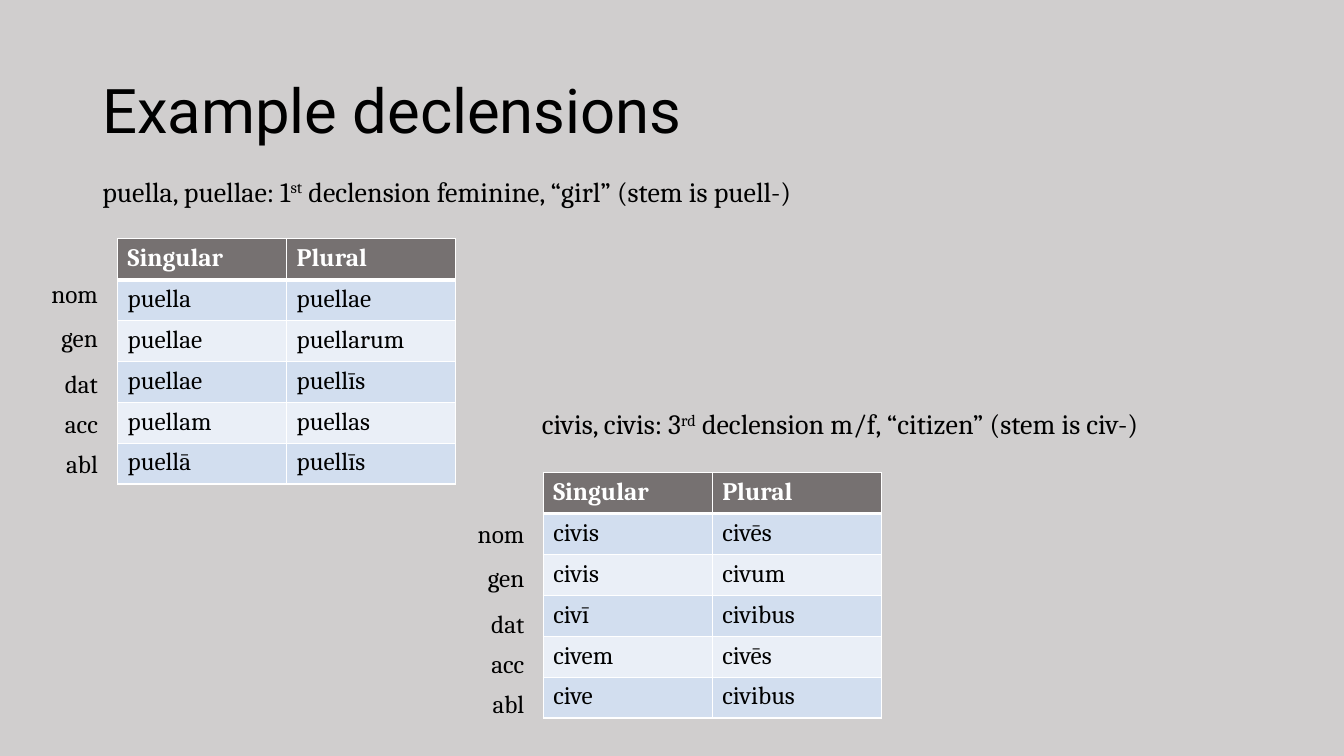
from lxml.etree import SubElement
from pptx import Presentation
from pptx.dml.color import RGBColor
from pptx.enum.shapes import MSO_SHAPE
from pptx.enum.text import MSO_ANCHOR, PP_ALIGN
from pptx.oxml.ns import qn
from pptx.util import Pt

BLACK = RGBColor(0, 0, 0)
WHITE = RGBColor(255, 255, 255)
GREY = RGBColor(0xD0, 0xCE, 0xCE)
HEAD = RGBColor(0x76, 0x71, 0x71)
BANDS = [RGBColor(0xEA, 0xEF, 0xF7), RGBColor(0xD2, 0xDE, 0xEF)]

CASES = ["nom", "gen", "dat", "acc", "abl"]
DROPS = [0, 31.7, 64.1, 92.9, 121.7]
ROW, COL = 29.2, 120.75

# Heading runs and place, table place, label place, forms
NOUNS = [
    (["puella, puellae: 1", "st", " declension feminine, “girl” (stem is puell-)"],
     (66, 121, 840), (84, 170.6), (28, 195.1),
     [("puella", "puellae"), ("puellae", "puellarum"), ("puellae", "puellīs"),
      ("puellam", "puellas"), ("puellā", "puellīs")]),
    (["civis, civis: 3", "rd", " declension m/f, “citizen” (stem is civ-)"],
     (380, 286.8, 500), (388, 337.7), (332.6, 366.5),
     [("civis", "civēs"), ("civis", "civum"), ("civī", "civibus"),
      ("civem", "civēs"), ("cive", "civibus")]),
]


def add_text(shapes, runs, box, size, face="Cambria"):
    """Add a one-paragraph text box; every second run is superscript."""
    frame = shapes.add_textbox(*map(Pt, box)).text_frame
    frame.word_wrap = True
    para = frame.paragraphs[0]
    para.font.size, para.font.name = Pt(size), face
    para.font.color.rgb = BLACK
    for i, text in enumerate(runs):
        run = para.add_run()
        run.text = text
        if i % 2:
            run.font._element.set("baseline", "30000")
    return frame


def add_edge(cell, side, width):
    line = SubElement(cell._tc.get_or_add_tcPr(), qn("a:ln" + side), w=str(Pt(width)))
    fill = SubElement(line, qn("a:solidFill"))
    SubElement(fill, qn("a:srgbClr"), val=str(WHITE))


deck = Presentation()
deck.slide_width, deck.slide_height = Pt(960), Pt(540)
slide = deck.slides.add_slide(deck.slide_layouts[6])
shapes = slide.shapes

back = shapes.add_shape(MSO_SHAPE.RECTANGLE, 0, 0, Pt(960), Pt(540))
back.shadow.inherit = False
back.fill.solid()
back.fill.fore_color.rgb = GREY
back.line.fill.background()

title = add_text(shapes, ["Example declensions"], (66, 28.8, 828, 104.4), 44, "Roboto")
title.vertical_anchor = MSO_ANCHOR.MIDDLE
title.paragraphs[0].line_spacing = 0.9

for runs, place, spot, (left, top), forms in NOUNS:
    add_text(shapes, runs, (*place, 31.5), 20)

    rows = [("Singular", "Plural"), *forms]
    table = shapes.add_table(len(rows), 2, *map(Pt, spot), Pt(2 * COL),
                             Pt(len(rows) * ROW)).table
    for col in table.columns:
        col.width = Pt(COL)
    for r, words in enumerate(rows):
        table.rows[r].height = Pt(ROW)
        for c, word in enumerate(words):
            cell = table.cell(r, c)
            cell.text = word
            font = cell.text_frame.paragraphs[0].font
            font.name, font.size, font.bold = "Cambria", Pt(18), r == 0
            font.color.rgb = BLACK if r else WHITE
            for side in "LRTB":
                thick = (r, side) in [(0, "B"), (1, "T")]
                add_edge(cell, side, 3 if thick else 1)
            cell.fill.solid()
            cell.fill.fore_color.rgb = BANDS[r % 2] if r else HEAD

    group = shapes.add_group_shape()
    for case, drop in zip(CASES, DROPS):
        label = add_text(group.shapes, [case], (left, top + drop, 49, 29), 18)
        label.paragraphs[0].alignment = PP_ALIGN.RIGHT

deck.save("out.pptx")
